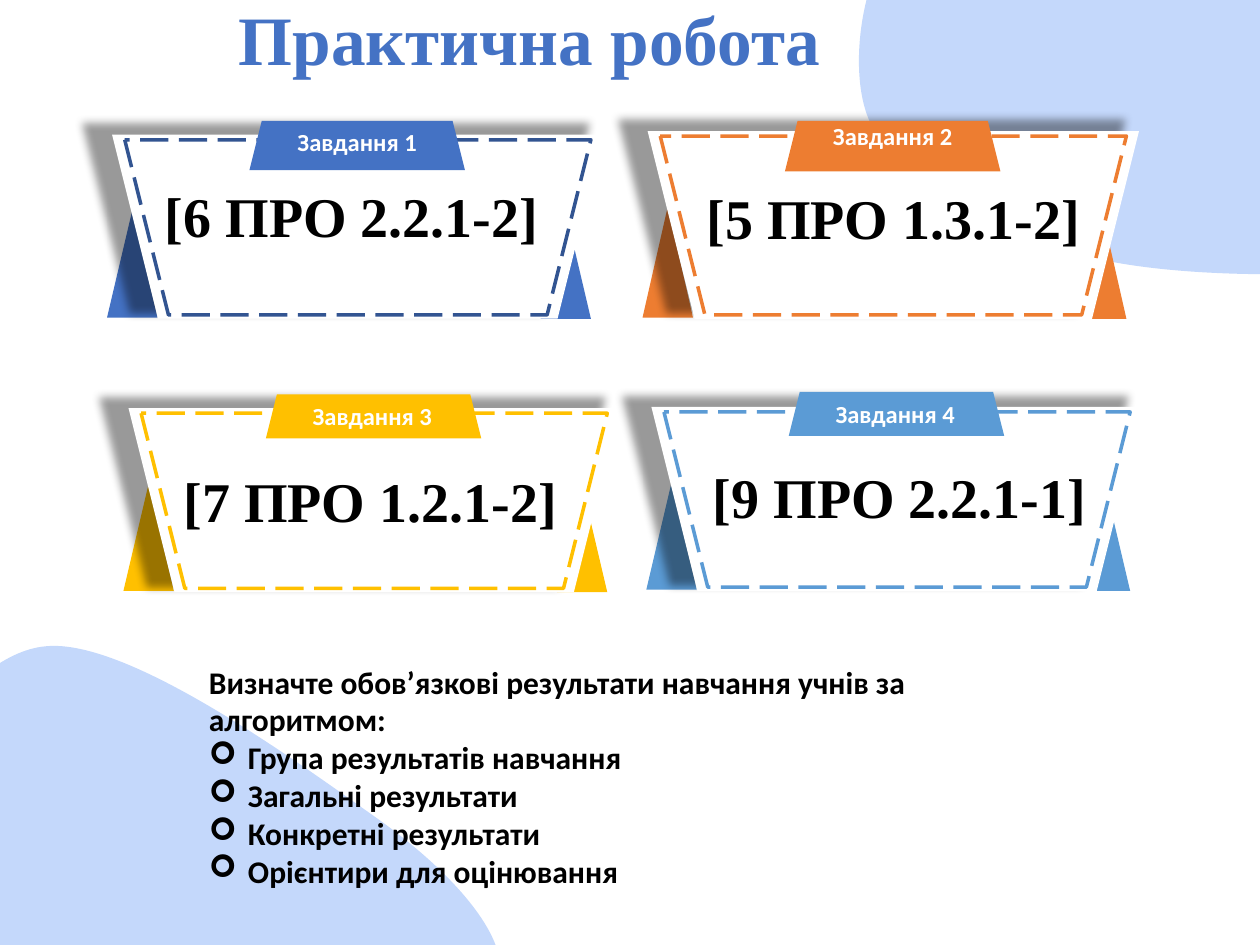
import pptx
import pptx.util
import pptx.dml.color
import pptx.enum.dml
import pptx.enum.shapes
import pptx.enum.text
import pptx.oxml
import pptx.oxml.ns
from lxml import etree

Inches = pptx.util.Inches
Pt = pptx.util.Pt
KIND = pptx.enum.shapes.MSO_SHAPE
ALIGN = pptx.enum.text.PP_ALIGN
qn = pptx.oxml.ns.qn

COLORS = {
    "white": "FFFFFF", "black": "000000", "pale": "C4D8FB",
    "blue": "4472C4", "navy": "325491", "orange": "ED7D31",
    "gold": "FFC000", "sky": "5B9BD5",
}

# Start point, then cubic curves: two control points and an end point
BLOBS = [
    [(7.34, -0.71),
     (7.81, -0.91), (9.12, -0.57), (9.73, -0.24),
     (10.34, 0.09), (10.79, 0.9), (11.02, 1.29),
     (11.25, 1.68), (11.51, 1.96), (11.11, 2.08),
     (10.72, 2.21), (9.35, 2.22), (8.65, 2.04),
     (7.95, 1.86), (7.12, 1.44), (6.91, 0.98),
     (6.69, 0.53), (6.87, -0.5), (7.34, -0.71)],
    [(0.36, 5.13),
     (1.02, 5.06), (2.39, 6.07), (3, 6.5),
     (3.6, 6.93), (3.97, 7.38), (3.97, 7.68),
     (3.98, 7.97), (3.57, 8.23), (3.03, 8.27),
     (2.5, 8.31), (1.44, 8.17), (0.77, 7.94),
     (-0.1, 7.71), (-0.9, 7.35), (-0.97, 6.88),
     (-1.04, 6.41), (-0.31, 5.19), (0.36, 5.13)],
]

# Panel box, tab rise and height, colours, label, its offset, code, its offset
CARDS = [
    ((0.89, 1.07, 3.9, 1.46), (0.11, 0.39), "blue", "navy",
     "Завдання 1", (1.04, -0.11), "[6 ПРО 2.2.1-2]", (0.32, 0.32)),
    ((5.14, 1.04, 3.9, 1.49), (0.08, 0.4), "orange", "orange",
     "Завдання 2", (1.04, -0.13), "[5 ПРО 1.3.1-2]", (0.37, 0.37)),
    ((1.02, 3.24, 3.9, 1.46), (0.11, 0.35), "gold", "gold",
     "Завдання 3", (1.03, -0.11), "[7 ПРО 1.2.1-2]", (0.34, 0.41)),
    ((5.17, 3.23, 3.9, 1.46), (0.12, 0.35), "sky", "sky",
     "Завдання 4", (1.03, -0.11), "[9 ПРО 2.2.1-1]", (0.39, 0.39)),
]

STEPS = ["Група результатів навчання", "Загальні результати",
         "Конкретні результати", "Орієнтири для оцінювання"]


def rgb(name):
    return pptx.dml.color.RGBColor.from_string(COLORS[name])


def paint(shape, fill=None, line=None):
    shape.shadow.inherit = False
    if fill:
        shape.fill.solid()
        shape.fill.fore_color.rgb = rgb(fill)
    else:
        shape.fill.background()
    if line:
        shape.line.color.rgb = rgb(line)
        shape.line.width = Pt(2)
        shape.line.dash_style = pptx.enum.dml.MSO_LINE.LONG_DASH
    else:
        shape.line.fill.background()


def put(shapes, kind, box, fill=None, line=None):
    shape = shapes.add_shape(kind, *map(Inches, box))
    paint(shape, fill, line)
    return shape


def flip(shape):
    shape._element.spPr.find(qn("a:xfrm")).set("flipV", "1")


def shade(shape):
    """Cast a soft, slightly larger shadow, held at the lower right."""
    node = shape._element.spPr.find(qn("a:effectLst"))
    node.append(pptx.oxml.parse_xml(
        f'<a:outerShdw {pptx.oxml.ns.nsdecls("a")} blurRad="{Pt(5)}" '
        'sx="103000" sy="103000" algn="br" rotWithShape="0">'
        f'<a:srgbClr val="{COLORS["black"]}"><a:alpha val="40000"/>'
        '</a:srgbClr></a:outerShdw>'))


def write(shapes, box, lines, size, font, color, align=ALIGN.LEFT, wrap=True):
    frame = shapes.add_textbox(*map(Inches, box)).text_frame
    frame.word_wrap = wrap
    frame.text = "\n".join(lines)
    for para in frame.paragraphs:
        para.alignment = align
        for run in para.runs:
            run.font.size = Pt(size)
            run.font.name = font
            run.font.bold = True
            run.font.color.rgb = rgb(color)
    return frame


def add_blob(shapes, points):
    """Draw the points as a freeform, each three segments made one curve."""
    start, *rest = [tuple(map(Inches, point)) for point in points]
    build = shapes.build_freeform(*start)
    build.add_line_segments(rest)
    shape = build.convert_to_shape()
    paint(shape, "pale")
    route = next(shape._element.iter(qn("a:path")))
    lines = route.findall(qn("a:lnTo"))[:len(rest)]
    for i in range(0, len(lines), 3):
        curve = etree.Element(qn("a:cubicBezTo"))
        lines[i].addprevious(curve)
        for line in lines[i:i + 3]:
            curve.append(line[0])
            route.remove(line)


def add_title(shapes, box):
    frame = write(shapes, box, ["Практична робота"], 39.6,
                  "Times New Roman", "blue", ALIGN.CENTER)
    frame.vertical_anchor = pptx.enum.text.MSO_ANCHOR.MIDDLE
    frame.paragraphs[0].line_spacing = 0.9


def add_card(slide, box, tab, fill, line, label, shift, code, place):
    x, y, w, h = box
    rise, tall = tab
    shapes = slide.shapes.add_group_shape().shapes
    for left, top in ((x + w - 0.5, y + 0.61), (x - 0.04, y + 0.6)):
        put(shapes, KIND.ISOSCELES_TRIANGLE, (left, top, 0.4, h - 0.61), fill)
    panel = put(shapes, KIND.TRAPEZOID, box, "white")
    flip(panel)
    shade(panel)
    flip(put(shapes, KIND.TRAPEZOID,
             (x + 0.1, y + 0.04, w - 0.2, h - 0.07), line=line))
    put(shapes, KIND.TRAPEZOID, (x + 1.09, y - rise, 1.71, tall), fill)
    write(shapes, (x + shift[0], y + shift[1], 1.81, 0.34), [label],
          14, "Calibri", "white", ALIGN.CENTER)
    write(shapes, (x + place[0], y + place[1], 3.19, 0.64), [code],
          32, "Times New Roman", "black", wrap=False)


def add_steps(shapes, box):
    head = "Визначте обов’язкові результати навчання учнів за алгоритмом:"
    frame = write(shapes, box, [head, *STEPS], 18, "Calibri", "black")
    for para in frame.paragraphs[1:]:
        props = para._p.get_or_add_pPr()
        props.set("marL", str(Inches(0.31)))
        props.set("indent", str(-Inches(0.31)))
        face = etree.SubElement(props, qn("a:buFont"))
        face.set("typeface", "Wingdings")
        mark = etree.SubElement(props, qn("a:buChar"))
        mark.set("char", "➢")


def main():
    deck = pptx.Presentation()
    deck.slide_width, deck.slide_height = Inches(10), Inches(7.5)
    slide = deck.slides.add_slide(deck.slide_layouts[6])
    for points in BLOBS:
        add_blob(slide.shapes, points)
    add_title(slide.shapes, (0.09, 0.04, 8.23, 0.6))
    for card in CARDS:
        add_card(slide, *card)
    add_steps(slide.shapes, (1.56, 5.21, 6.81, 1.92))
    deck.save("out.pptx")


if __name__ == "__main__":
    main()
